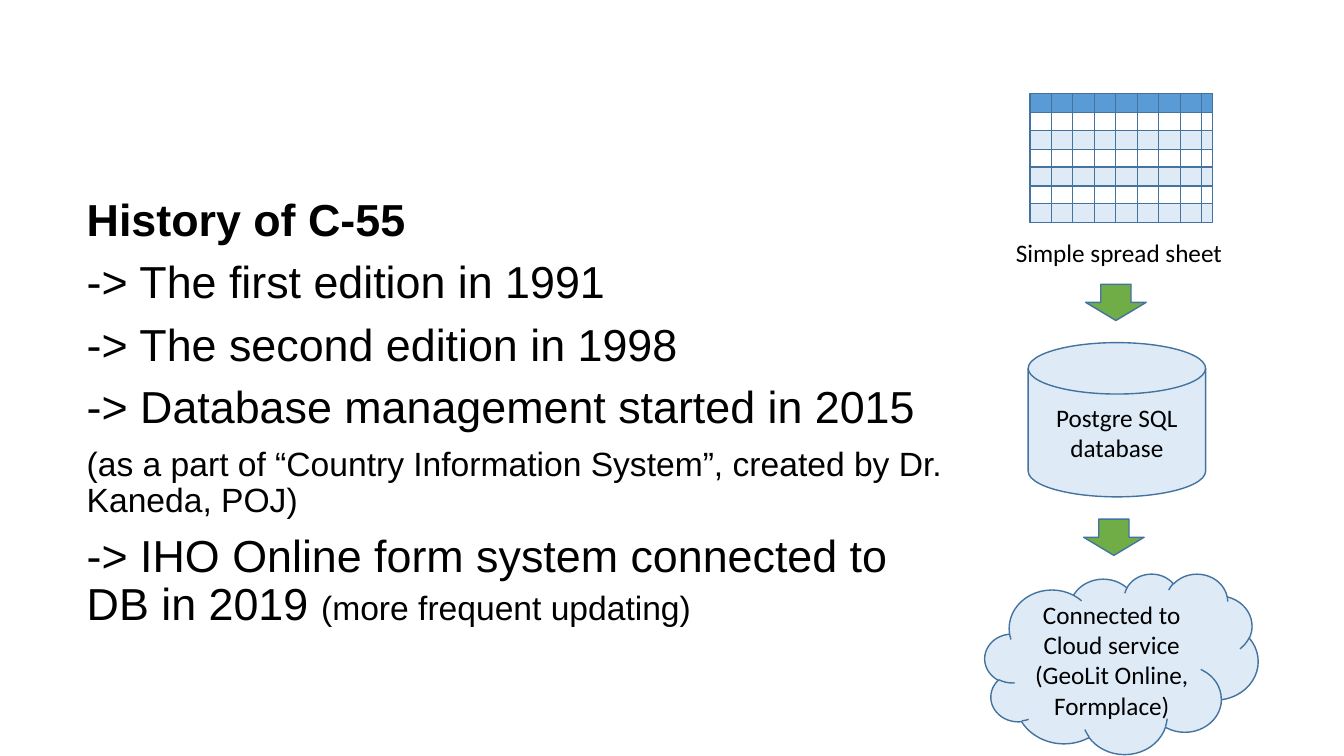
from lxml import etree
from pptx import Presentation
from pptx import util as u
from pptx.dml.color import RGBColor
from pptx.enum import shapes, text
from pptx.oxml.ns import qn

WIDTH, HEIGHT = u.Inches(13.33), u.Inches(7.5)
COLOURS = {"text": "000000", "line": "43739E", "sheet": "FFFFFF",
           "header": "5B9BD5", "pale": "DEEBF7", "arrow": "70AD47"}
SHAPE = shapes.MSO_SHAPE

# Each paragraph is a list of (words, size, bold)
HISTORY = [
    [("History of C-55", 32, True)],
    [("-> The first edition in 1991", 32, False)],
    [("-> The second edition in 1998", 32, False)],
    [("-> Database management started in 2015", 32, False)],
    [("(as a part of “Country Information System”, created by Dr. Kaneda, POJ)",
      24, False)],
    [("-> IHO Online form system connected to DB in 2019 ", 32, False),
     ("(more frequent updating)", 24, False)],
]


def area(left, top, width, height):
    """Turn percentages of the slide's size into lengths."""
    return (round(WIDTH * left / 100), round(HEIGHT * top / 100),
            round(WIDTH * width / 100), round(HEIGHT * height / 100))


def style_font(font, name, size, bold=False):
    font.name, font.size, font.bold = name, u.Pt(size), bold
    font.color.rgb = RGBColor.from_string(COLOURS["text"])


def write_caption(frame, words):
    frame.word_wrap = True
    frame.text = words
    caption = frame.paragraphs[0]
    caption.alignment = text.PP_ALIGN.CENTER
    style_font(caption.runs[0].font, "Calibri", 18)


def add_outlined(parent, kind, place, fill=None, words=None):
    outlined = parent.add_shape(kind, *area(*place))
    outlined.shadow.inherit = False
    if fill:
        outlined.fill.solid()
        outlined.fill.fore_color.rgb = RGBColor.from_string(COLOURS[fill])
    else:
        outlined.fill.background()
    outlined.line.color.rgb = RGBColor.from_string(COLOURS["line"])
    outlined.line.width = u.Pt(1)
    if words:
        frame = outlined.text_frame
        frame.vertical_anchor = text.MSO_ANCHOR.MIDDLE
        # Narrow side margins keep the caption to few lines
        frame.margin_left = frame.margin_right = u.Inches(0.05)
        write_caption(frame, words)


def add_history(body):
    body.left, body.top, body.width, body.height = area(5.7, 25.47, 66.68, 60)
    frame = body.text_frame
    frame.auto_size = text.MSO_AUTO_SIZE.NONE
    frame.vertical_anchor = text.MSO_ANCHOR.TOP
    for index, parts in enumerate(HISTORY):
        entry = frame.add_paragraph() if index else frame.paragraphs[0]
        entry.line_spacing = 0.9
        entry.space_before = u.Pt(10 if index else 0)
        # No bullet and no hanging indent
        properties = entry._p.get_or_add_pPr()
        properties.set("marL", "0")
        properties.set("indent", "0")
        etree.SubElement(properties, qn("a:buNone"))
        for words, size, bold in parts:
            run = entry.add_run()
            run.text = words
            style_font(run.font, "Arial", size, bold)


def add_spreadsheet(slide):
    left, top, width, height = 76.65, 12.4, 13.58, 16
    sheet = slide.shapes.add_group_shape().shapes
    add_outlined(sheet, SHAPE.RECTANGLE, (left, top, width, height), "sheet")
    # Every second row is filled, the first as the header
    for row in range(4):
        add_outlined(sheet, SHAPE.RECTANGLE,
                     (left, top + 4.84 * row, width, 2.53),
                     "pale" if row else "header")
    # Every second column is outlined
    for column in range(4):
        add_outlined(sheet, SHAPE.RECTANGLE,
                     (left + 1.58 + 3.2 * column, top, 1.58, 17.07))


def main():
    deck = Presentation()
    deck.slide_width, deck.slide_height = WIDTH, HEIGHT
    slide = deck.slides.add_slide(deck.slide_layouts[1])
    heading = slide.shapes.title
    heading.element.getparent().remove(heading.element)

    # History on the left
    add_history(slide.placeholders[1])

    # From spreadsheet to database to cloud on the right
    add_spreadsheet(slide)
    sheet_label = slide.shapes.add_textbox(*area(74.03, 30.8, 18.45, 5.33))
    write_caption(sheet_label.text_frame, "Simple spread sheet")
    add_outlined(slide.shapes, SHAPE.FLOWCHART_MAGNETIC_DISK,
                 (76.5, 45.33, 13.2, 20.4), "pale", "Postgre SQL database")
    add_outlined(slide.shapes, SHAPE.CLOUD, (73.28, 75.87, 20.33, 23.87),
                 "pale", "Connected to Cloud service (GeoLit Online, Formplace)")
    for left, top in ((80.78, 37.6), (80.63, 68.67)):
        add_outlined(slide.shapes, SHAPE.DOWN_ARROW, (left, top, 4.5, 4.8),
                     "arrow")

    deck.save("out.pptx")


if __name__ == "__main__":
    main()
